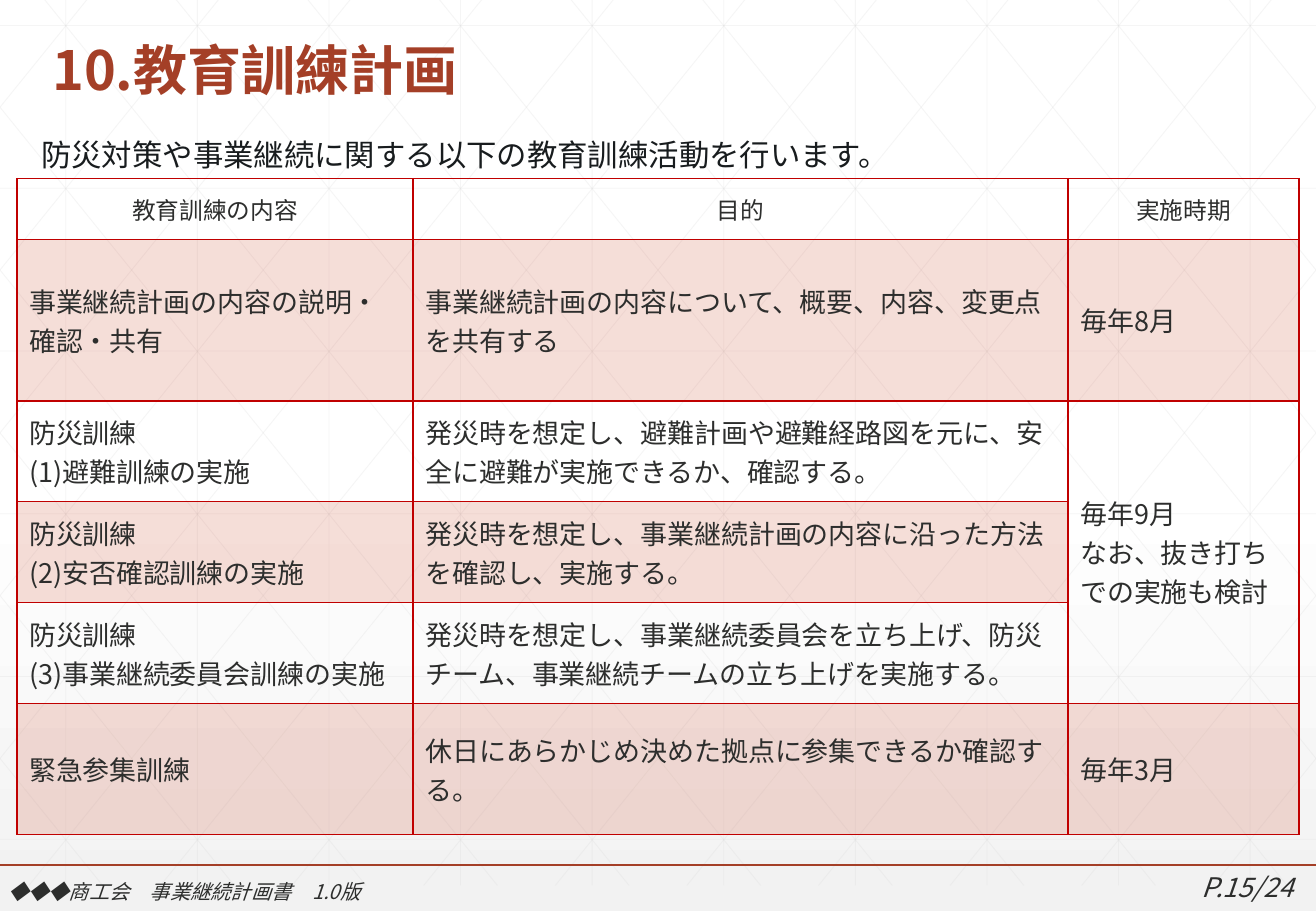
from lxml import etree
from pptx import Presentation
from pptx.dml.color import RGBColor
from pptx.enum.shapes import MSO_CONNECTOR
from pptx.enum.text import MSO_ANCHOR, MSO_AUTO_SIZE, PP_ALIGN
from pptx.oxml.ns import qn
from pptx.util import Inches, Pt

LEFT, CENTER, RIGHT = PP_ALIGN.LEFT, PP_ALIGN.CENTER, PP_ALIGN.RIGHT
TOP, MIDDLE, BOTTOM = MSO_ANCHOR.TOP, MSO_ANCHOR.MIDDLE, MSO_ANCHOR.BOTTOM
STRAIGHT = MSO_CONNECTOR.STRAIGHT

FONT = "Noto Sans CJK JP"
WHITE = RGBColor(0xFF, 0xFF, 0xFF)
PALE_GRAY = RGBColor(0xF2, 0xF2, 0xF2)
GRID_GRAY = RGBColor(0xD9, 0xD9, 0xD9)
BRICK = RGBColor(0xA4, 0x3F, 0x27)
BAND = RGBColor(0xD1, 0x5A, 0x3E)
BORDER = RGBColor(0xC0, 0x00, 0x00)
DARK = RGBColor(0x2D, 0x2E, 0x2D)
INK = RGBColor(0x18, 0x1C, 0x1E)

WIDTH, HEIGHT = 10.83, 7.5

COLUMNS = [3.26, 5.39, 1.9]
ROWS = [0.5, 1.33, 0.83, 0.83, 0.83, 1.08]
CELLS = [
    ["教育訓練の内容", "目的", "実施時期"],
    ["事業継続計画の内容の説明・確認・共有",
     "事業継続計画の内容について、概要、内容、変更点を共有する", "毎年8月"],
    ["防災訓練\n(1)避難訓練の実施",
     "発災時を想定し、避難計画や避難経路図を元に、安全に避難が実施できるか、確認する。",
     "毎年9月\nなお、抜き打ちでの実施も検討"],
    ["防災訓練\n(2)安否確認訓練の実施",
     "発災時を想定し、事業継続計画の内容に沿った方法を確認し、実施する。", None],
    ["防災訓練\n(3)事業継続委員会訓練の実施",
     "発災時を想定し、事業継続委員会を立ち上げ、防災チーム、事業継続チームの立ち上げを実施する。",
     None],
    ["緊急参集訓練", "休日にあらかじめ決めた拠点に参集できるか確認する。", "毎年3月"],
]


def write_text(frame, text, size, color=DARK, bold=False, italic=False,
               align=LEFT, line_spacing=None):
    for index, line in enumerate(text.split("\n")):
        paragraph = frame.add_paragraph() if index else frame.paragraphs[0]
        paragraph.alignment = align
        if line_spacing:
            paragraph.line_spacing = line_spacing
        run = paragraph.add_run()
        run.text = line
        font = run.font
        font.name, font.size, font.bold, font.italic = FONT, Pt(size), bold, italic
        font.color.rgb = color
        properties = run._r.get_or_add_rPr()
        etree.SubElement(properties, qn("a:ea")).set("typeface", FONT)


def set_opacity(element, percent):
    for color in element.iter(qn("a:srgbClr")):
        etree.SubElement(color, qn("a:alpha")).set("val", str(percent * 1000))


def add_line(slide, start, end, color, width, opacity=100):
    line = slide.shapes.add_connector(STRAIGHT, *map(Inches, start + end))
    line.line.color.rgb = color
    line.line.width = Pt(width)
    properties = line.element.spPr
    if opacity < 100:
        set_opacity(properties, opacity)
    etree.SubElement(properties, qn("a:effectLst"))


def add_text_box(slide, box, text, **text_format):
    shape = slide.shapes.add_textbox(*map(Inches, box))
    frame = shape.text_frame
    frame.word_wrap = True
    frame.vertical_anchor = TOP
    write_text(frame, text, **text_format)


def set_borders(cell, color, width):
    properties = cell._tc.get_or_add_tcPr()
    for index, side in enumerate(("lnL", "lnR", "lnT", "lnB")):
        border = etree.Element(qn("a:" + side), w=str(Pt(width)))
        fill = etree.SubElement(border, qn("a:solidFill"))
        etree.SubElement(fill, qn("a:srgbClr")).set("val", str(color))
        properties.insert(index, border)


def add_backdrop(slide):
    # Gradient from white to pale gray in the lower half
    fill = slide.background.fill
    fill.gradient()
    fill.gradient_angle = 270
    for stop, position, color in zip(fill.gradient_stops, (0.53, 1), (WHITE, PALE_GRAY)):
        stop.position = position
        stop.color.rgb = color


def add_lattice(slide, box):
    left, top, width, height = box
    right, bottom = left + width, top + height
    step = width / 10
    run = 6.06
    slope = height / run
    segments = []
    # Vertical and horizontal lines
    for index in range(10):
        x = left + step * (index + 0.5)
        segments.append(((x, top), (x, bottom)))
    for index in range(6):
        y = top + 0.42 + 1.34 * index
        segments.append(((left, y), (right, y)))
    # Diagonals clipped at the sides, each with its mirror line
    for index in range(-5, 10):
        x_top = left + 0.2 + step * index
        x_start, x_end = max(x_top, left), min(x_top + run, right)
        y_start, y_end = (top + (x - x_top) * slope for x in (x_start, x_end))
        segments.append(((x_start, y_start), (x_end, y_end)))
        segments.append(((left + right - x_start, y_start), (left + right - x_end, y_end)))
    for start, end in segments:
        add_line(slide, start, end, GRID_GRAY, 0.5, opacity=25)


def add_footer(slide, box):
    left, top, width, height = box
    add_line(slide, (left, top), (left + width, top), BRICK, 1)
    add_text_box(slide, (left + width - 1.66, top, 1.57, 0.37), "P.15/24",
                 size=16, italic=True, align=RIGHT)
    add_text_box(slide, (left - 0.03, top + 0.07, 5.27, 0.3),
                 "◆◆◆商工会\u3000事業継続計画書\t1.0版".replace("\u3000", "　"),
                 size=12, italic=True)


def add_title(slide, box):
    title = slide.shapes.title
    title.left, title.top, title.width, title.height = map(Inches, box)
    frame = title.text_frame
    frame.auto_size = MSO_AUTO_SIZE.NONE
    frame.vertical_anchor = BOTTOM
    write_text(frame, "10.教育訓練計画", 32, color=BRICK, bold=True, line_spacing=0.9)
    # Bring the title in front of the lattice
    title.element.getparent().append(title.element)


def add_training_table(slide, box):
    table = slide.shapes.add_table(len(ROWS), len(COLUMNS), *map(Inches, box)).table
    table.first_row = table.horz_banding = False
    for column, width in zip(table.columns, COLUMNS):
        column.width = Inches(width)
    for row, height in zip(table.rows, ROWS):
        row.height = Inches(height)
    table.cell(2, 2).merge(table.cell(4, 2))
    for row_index, texts in enumerate(CELLS):
        is_header = row_index == 0
        for column_index, text in enumerate(texts):
            cell = table.cell(row_index, column_index)
            cell.vertical_anchor = MIDDLE
            if row_index % 2 and text:
                cell.fill.solid()
                cell.fill.fore_color.rgb = BAND
                set_opacity(cell._tc.tcPr, 20)
            else:
                cell.fill.background()
            set_borders(cell, BORDER, 1)
            if text:
                write_text(cell.text_frame, text, 14 if is_header else 16,
                           align=CENTER if is_header else LEFT)


def main():
    presentation = Presentation()
    presentation.slide_width, presentation.slide_height = Inches(WIDTH), Inches(HEIGHT)
    slide = presentation.slides.add_slide(presentation.slide_layouts[5])
    add_backdrop(slide)
    add_lattice(slide, (0, -0.21, WIDTH, HEIGHT))
    add_footer(slide, (0, 7.12, WIDTH, 0.38))
    add_title(slide, (0.33, 0.16, 10.15, 0.73))
    add_training_table(slide, (0.14, 1.47, sum(COLUMNS), sum(ROWS)))
    add_text_box(slide, (0.24, 1.07, 10.15, 0.4),
                 "防災対策や事業継続に関する以下の教育訓練活動を行います。", size=18, color=INK)
    presentation.save("out.pptx")


if __name__ == "__main__":
    main()
